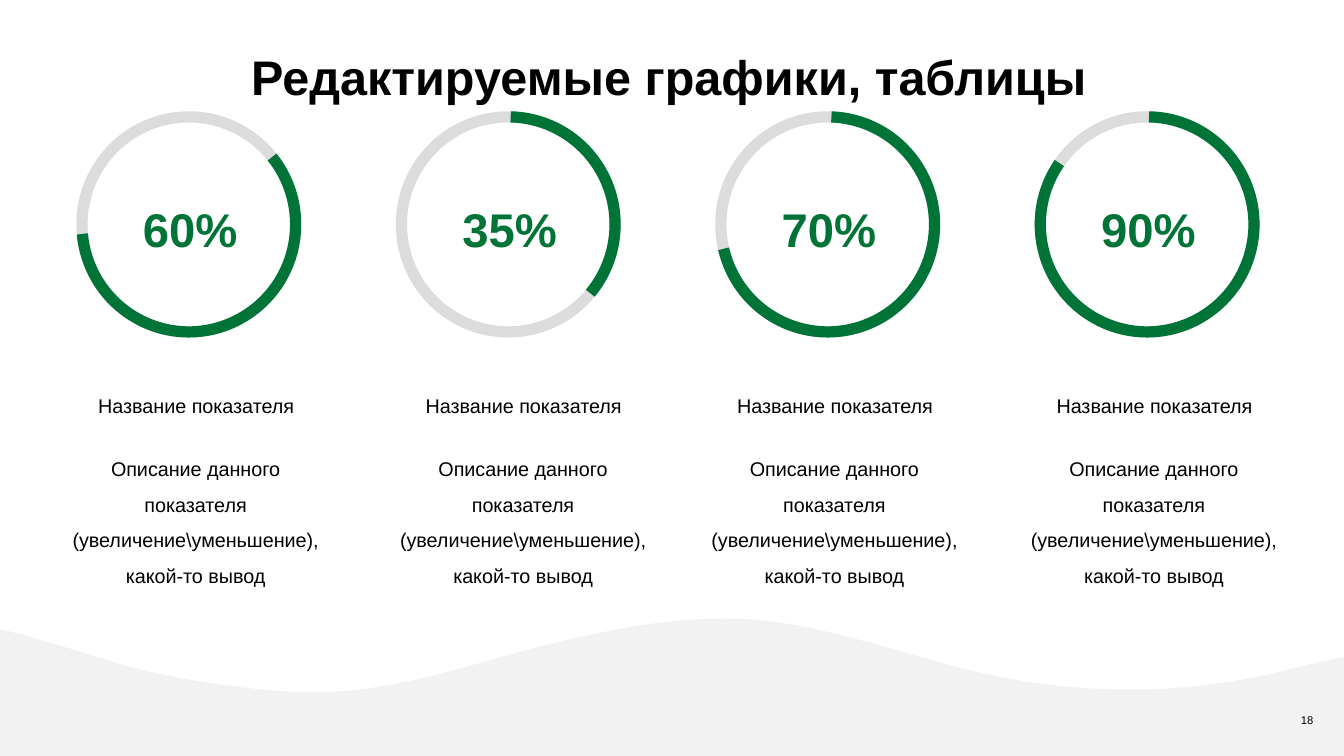
from dataclasses import dataclass

from pptx import Presentation
from pptx.dml.color import RGBColor
from pptx.enum.shapes import MSO_SHAPE
from pptx.enum.text import PP_ALIGN
from pptx.util import Inches, Pt


@dataclass(frozen=True)
class Theme:
    """Colours, font and type sizes of the slide."""
    ink: str = "000000"
    accent: str = "007337"
    track: str = "DCDCDC"
    wave: str = "F2F2F2"
    font: str = "Arial"
    title: float = 26
    value: float = 25.3
    body: float = 10.6
    number: float = 6
    ring: float = 6


@dataclass(frozen=True)
class Indicator:
    """One ring: its value, arc angles in degrees and text offset."""
    value: str
    start: float
    end: float
    shift: float = 0


THEME = Theme()
SLIDE_W = 10
SLIDE_H = SLIDE_W * 9 / 16
LEFT, LAST_LEFT, TOP, RING_W, RING_H = 0.61, 7.74, 0.87, 1.59, 1.6
NAME = "Название показателя"
DESCRIPTION = "Описание данного показателя (увеличение\\уменьшение), какой-то вывод"
INDICATORS = [
    Indicator("60%", 321.05, 174.87),
    Indicator("35%", 271.3, 39.99, 0.06),
    Indicator("70%", 272, 166.8),
    Indicator("90%", 271.01, 214.95),
]
WAVE_START = (10, 4.89)
WAVE_CURVES = [
    ((9.84, 4.92), (9.59, 4.98), (9.56, 4.99)),
    ((9.33, 5.05), (9.1, 5.08), (8.87, 5.11)),
    ((8.31, 5.16), (7.76, 5.12), (7.23, 4.99)),
    ((6.69, 4.86), (6.17, 4.66), (5.61, 4.61)),
    ((5.06, 4.57), (4.5, 4.69), (3.98, 4.82)),
    ((3.38, 4.98), (2.83, 5.18), (2.18, 5.15)),
    ((1.76, 5.12), (1.33, 5.06), (0.92, 4.95)),
    ((0.86, 4.93), (0.32, 4.76), (0, 4.68)),
]


def rgb(code):
    """Turn a hex code into a colour."""
    return RGBColor.from_string(code)


def add_text(s, box, text, size, color=THEME.ink, bold=False,
             align=PP_ALIGN.CENTER, insets=(0.05, 0.03), spacing=None):
    """Add a one-paragraph text box."""
    tf = s.shapes.add_textbox(*map(Inches, box)).text_frame
    tf.word_wrap = True
    tf.margin_left = tf.margin_right = Inches(insets[0])
    tf.margin_top = tf.margin_bottom = Inches(insets[1])
    tf.text = text
    p = tf.paragraphs[0]
    p.alignment = align
    if spacing:
        p.line_spacing = spacing
    font = p.runs[0].font
    font.name, font.size, font.bold = THEME.font, Pt(size), bold
    font.color.rgb = rgb(color)


def add_outline(s, kind, box, color):
    """Add an unfilled shape with a ring-wide line."""
    sp = s.shapes.add_shape(kind, *map(Inches, box))
    sp.shadow.inherit = False
    sp.fill.background()
    sp.line.color.rgb = rgb(color)
    sp.line.width = Pt(THEME.ring)
    return sp


def bezier(p0, p1, p2, p3, steps=16):
    """Return points along a cubic curve, without its start."""
    return [
        tuple((1 - t) ** 3 * a + 3 * (1 - t) ** 2 * t * b
              + 3 * (1 - t) * t ** 2 * c + t ** 3 * d
              for a, b, c, d in zip(p0, p1, p2, p3))
        for t in (i / steps for i in range(1, steps + 1))
    ]


def add_wave(s, width, height):
    """Draw the wavy band along the bottom of the slide."""
    points = [WAVE_START]
    for curve in WAVE_CURVES:
        points += bezier(points[-1], *curve)
    points += [(0, height), (width, height)]
    start, *rest = [(Inches(x), Inches(y)) for x, y in points]
    builder = s.shapes.build_freeform(*start)
    builder.add_line_segments(rest, close=True)
    sp = builder.convert_to_shape()
    sp.shadow.inherit = False
    sp.fill.solid()
    sp.fill.fore_color.rgb = rgb(THEME.wave)
    sp.line.fill.background()


def add_indicator(s, item, x, y, w, h):
    """Draw a progress ring in the box, with its texts below."""
    add_outline(s, MSO_SHAPE.OVAL, (x, y, w, h), THEME.track)
    add_text(s, (x + 0.39, y + 0.62, 0.83, 0.41), item.value, THEME.value,
             THEME.accent, bold=True, insets=(0, 0))
    arc = add_outline(s, MSO_SHAPE.ARC, (x, y, w, h), THEME.accent)
    for i, angle in enumerate((item.start, item.end)):
        arc.adjustments[i] = angle * 0.6
    text_x = x + item.shift
    add_text(s, (text_x, y + 2.03, 1.7, 0.27), NAME, THEME.body)
    add_text(s, (text_x - 0.16, y + 2.41, 2.01, 1.09), DESCRIPTION,
             THEME.body, spacing=1.5)


def main():
    """Build and save the slide."""
    prs = Presentation()
    prs.slide_width, prs.slide_height = Inches(SLIDE_W), Inches(SLIDE_H)
    s = prs.slides.add_slide(prs.slide_layouts[6])
    add_wave(s, SLIDE_W, SLIDE_H)
    add_text(s, (8.89, 5.26, 0.98, 0.2), "18", THEME.number,
             align=PP_ALIGN.RIGHT, insets=(0.1, 0.05))
    pitch = (LAST_LEFT - LEFT) / (len(INDICATORS) - 1)
    for i, item in enumerate(INDICATORS):
        add_indicator(s, item, LEFT + i * pitch, TOP, RING_W, RING_H)
    add_text(s, (1.37, 0.32, 7.22, 0.37), "Редактируемые графики, таблицы",
             THEME.title, bold=True)
    prs.save("out.pptx")


if __name__ == "__main__":
    main()
